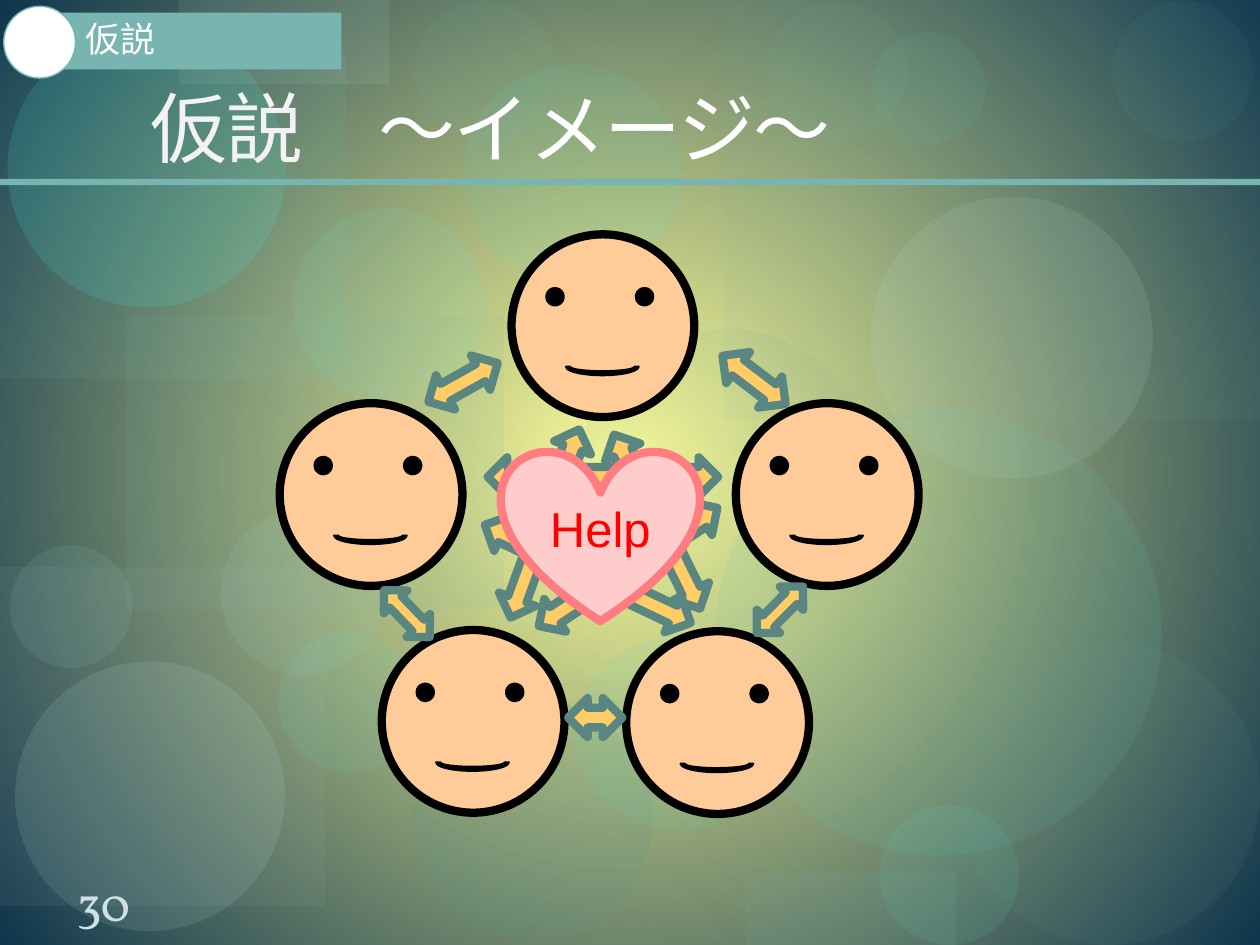
import pptx
import pptx.util
import pptx.dml.color
import pptx.enum.shapes
import pptx.enum.text
from lxml import etree
from pptx.oxml.ns import qn

Inches, Pt = pptx.util.Inches, pptx.util.Pt
RGB = pptx.dml.color.RGBColor.from_string
KIND = pptx.enum.shapes.MSO_SHAPE
ALIGN = pptx.enum.text.PP_ALIGN
ANCHOR = pptx.enum.text.MSO_ANCHOR
OVAL, RECT = KIND.OVAL, KIND.RECTANGLE

C = {"glow": "FFFF99", "deep": "0E354D", "teal": "79B5B0", "edge": "5A8682",
     "gold": "FFCC66", "skin": "FFCC99", "ink": "000000", "white": "FFFFFF",
     "pale": "F2F2F2", "pink": "FFCCCC", "rose": "FF7C80", "red": "FF0000",
     "page": "D1E1E3", "aqua": "65E8DC", "jade": "44EADC", "moss": "70A39E",
     "mist": "C1E8E4", "foam": "97DCD6", "pine": "549791", "gray": "B2B7BA",
     "mint": "77D6CE", "haze": "BED7D4", "sea": "61CDC4"}
SERIF, SANS = "Vollkorn", "Arial"
BOLD, THIN = 4.72, 0.79  # line widths in points


def draw(home, kind, box, fill, line=None, width=BOLD):
    """Add a flat shape; box is left, top, width, height in inches."""
    shape = home.add_shape(kind, *[Inches(v) for v in box])
    shape.shadow.inherit = False
    shape.fill.solid()
    shape.fill.fore_color.rgb = RGB(C[fill])
    if line:
        shape.line.color.rgb = RGB(C[line])
        shape.line.width = Pt(width)
    else:
        shape.line.fill.background()
    return shape


def write(shape, text, size, font, color, align, left=0):
    """Put one line of text, centred in height, into a shape."""
    frame = shape.text_frame
    frame.word_wrap = True
    frame.vertical_anchor = ANCHOR.MIDDLE
    frame.margin_left = Inches(left)
    frame.margin_top = frame.margin_right = frame.margin_bottom = 0
    par = frame.paragraphs[0]
    par.text = text
    par.alignment = align
    par.font.size = Pt(size)
    par.font.name = font
    par.font.color.rgb = RGB(C[color])
    return par


prs = pptx.Presentation()
prs.slide_width, prs.slide_height = Inches(10), Inches(7.5)
slide = prs.slides.add_slide(prs.slide_layouts[5])
shapes = slide.shapes

# Background: a glow that spreads from the centre
back = slide.background.fill
back.gradient()
for stop, name, place in zip(back.gradient_stops, ("glow", "deep"), (0, 1)):
    stop.color.rgb = RGB(C[name])
    stop.position = place
grad = slide._element.find(".//" + qn("a:gradFill"))
grad.remove(grad.find(qn("a:lin")))
ring = etree.SubElement(grad, qn("a:path"), path="circle")
etree.SubElement(ring, qn("a:fillToRect"), dict.fromkeys("ltrb", "50000"))

# Faint bubbles and panels: kind, box, colour, opacity in percent
veils = [
    (RECT, (1, 2.51, 3, 2.33), "teal", 9),
    (OVAL, (3.26, 5.55, 1.92, 1.9), "pine", 13),
    (RECT, (5.75, 0, 4.25, 3.33), "teal", 6),
    (RECT, (0, 4.5, 2.58, 2.69), "gray", 8),
    (OVAL, (4.57, 2.61, 2.38, 2.38), "moss", 8),
    (OVAL, (6.98, 6.39, 1.11, 1.11), "aqua", 9),
    (OVAL, (6.91, 1.56, 2.24, 2.24), "mist", 11),
    (OVAL, (0.12, 5.25, 2.14, 2.14), "mist", 12),
    (OVAL, (2.21, 5.01, 1.12, 1.12), "aqua", 9),
    (OVAL, (4.56, 5.06, 1.66, 1.53), "jade", 8),
    (RECT, (0, 0.4, 2.75, 2.61), "mint", 7),
    (RECT, (1.42, 0, 1.67, 0.67), "haze", 10),
    (OVAL, (0.06, 0.23, 2.21, 2.21), "jade", 15),
    (OVAL, (0.08, 4.33, 0.97, 0.97), "foam", 10),
    (OVAL, (2.32, 1.65, 1.53, 1.53), "aqua", 9),
    (OVAL, (3.68, 0.51, 1.74, 1.74), "jade", 8),
    (OVAL, (5.68, 3.25, 3.54, 3.54), "sea", 10),
    (OVAL, (6.08, 0.01, 1.12, 1.12), "aqua", 4),
    (OVAL, (7.6, 5.1, 2.4, 2.4), "moss", 8),
    (OVAL, (1.75, 4.05, 1.31, 1.31), "foam", 10),
    (OVAL, (6.92, 0.25, 0.9, 0.9), "aqua", 6),
    (OVAL, (8.83, 0.01, 1.12, 1.12), "aqua", 4),
    (RECT, (5.92, 6.92, 1.67, 0.58), "teal", 10),
    (OVAL, (3.29, 0.01, 1.12, 1.12), "aqua", 4),
]
for kind, box, color, alpha in veils:
    veil = draw(shapes, kind, box, color)
    tint = veil._element.spPr.find(".//" + qn("a:srgbClr"))
    etree.SubElement(tint, qn("a:alpha"), val=str(alpha * 1000))

# Title with its rule, in front of the bubbles
draw(shapes, RECT, (0, 1.42, 10, 0.05), "teal")
title = shapes.title
title.left, title.top = Inches(0.5), Inches(0.17)
title.width, title.height = Inches(9), Inches(1.25)
frame = title.text_frame
frame.auto_size = pptx.enum.text.MSO_AUTO_SIZE.NONE
frame.vertical_anchor = ANCHOR.BOTTOM
par = frame.paragraphs[0]
par.alignment = ALIGN.LEFT
par.font.size = Pt(44)
par.font.name = SERIF
for text, color in [("　仮説　", "pale"), ("～イメージ～", "white")]:
    run = par.add_run()
    run.text = text
    run.font.color.rgb = RGB(C[color])
    run.font._element.set("spc", "-100")
shapes._spTree.append(title._element)

# Section tag
tag = draw(shapes, RECT, (0.31, 0.1, 2.4, 0.45), "teal")
write(tag, "仮説", 20, SERIF, "white", ALIGN.LEFT, left=0.37).line_spacing = 0.9
draw(shapes, OVAL, (0.03, 0.05, 0.57, 0.57), "white", "teal", THIN)

# Five faces: each is one group, its parts placed from the head's corner
HEAD, EYE = 1.45, 0.09
heads = {"top": (4.06, 1.86), "left": (2.22, 3.2), "right": (5.84, 3.2),
         "low left": (3.03, 5), "low right": (4.97, 5.01)}
for x, y in heads.values():
    face = shapes.add_group_shape().shapes
    draw(face, OVAL, (x, y, HEAD, HEAD), "skin", "ink")
    for dx in (0.3, 1.01):
        draw(face, OVAL, (x + dx, y + 0.45, EYE, EYE), "ink", "ink")
    smile = draw(face, KIND.BLOCK_ARC, (x + 0.43, y + 0.98, 0.58, 0.14), "ink", "ink", 1)
    smile._element.spPr.xfrm.set("flipV", "1")

# Arrows between the faces: left, top, width, length, turn in degrees
cross = [
    (4.17, 3.36, 0.31, 1.59, 20),
    (5.06, 3.37, 0.31, 1.54, 333.7),
    (4.83, 3.65, 0.31, 1.7, 56.5),
    (4.51, 3.65, 0.31, 1.81, 115.5),
    (4.63, 2.87, 0.31, 1.83, 90),
]
outer = [
    (5.83, 2.7, 0.31, 0.63, 307.4),
    (3.52, 2.72, 0.31, 0.63, 240.8),
    (4.57, 5.48, 0.31, 0.43, 270),
    (6.06, 4.58, 0.26, 0.52, 44.8),
    (3.1, 4.61, 0.26, 0.52, 316),
]
for *box, turn in cross + outer:
    draw(shapes, KIND.UP_DOWN_ARROW, box, "gold", "edge").rotation = turn

# Heart, over the point where the arrows cross
heart = draw(shapes, KIND.HEART, (3.98, 3.57, 1.57, 1.36), "pink", "rose")
write(heart, "Help", 28, SANS, "red", ALIGN.CENTER)

# Page number
page = shapes.add_textbox(Inches(0.17), Inches(6.91), Inches(1.3), Inches(0.5))
write(page, "30", 28, SERIF, "page", ALIGN.CENTER)

prs.save("out.pptx")
